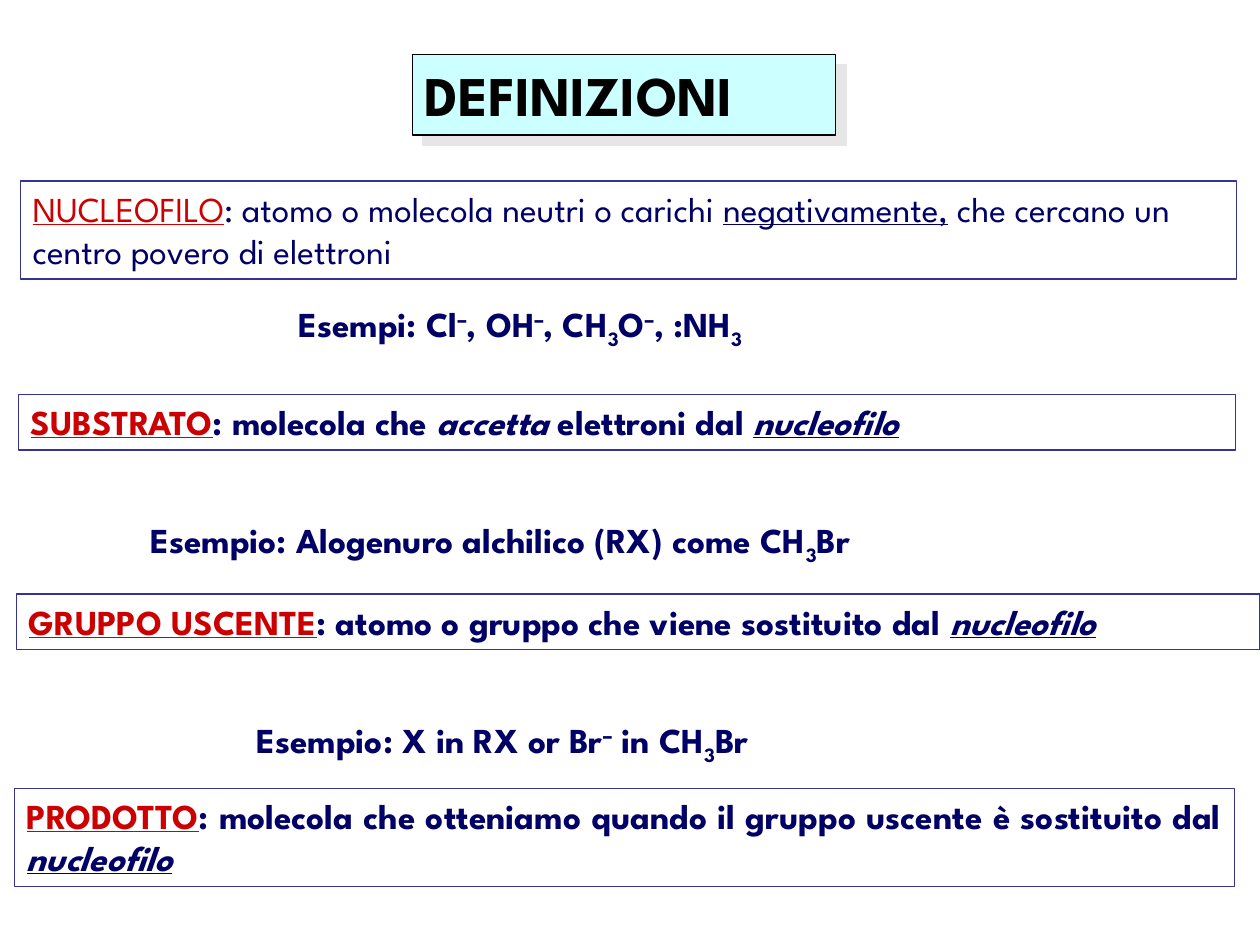
from lxml.etree import SubElement
from pptx import Presentation
from pptx.dml.color import RGBColor
from pptx.enum.shapes import MSO_SHAPE
from pptx.enum.text import MSO_ANCHOR, MSO_AUTO_SIZE, PP_ALIGN
from pptx.oxml.ns import qn
from pptx.util import Pt

FONT = "League Spartan"
BLACK = RGBColor(0x00, 0x00, 0x00)
NAVY = RGBColor(0x00, 0x00, 0x66)
RED = RGBColor(0xCC, 0x00, 0x00)
BORDER = RGBColor(0x33, 0x33, 0x99)
CYAN = RGBColor(0xCC, 0xFF, 0xFF)
SHADOW = RGBColor(0xE7, 0xE6, 0xE6)

# Run styles: t = term, u = underlined, i = italic, ^ = superscript, _ = subscript
BASELINES = {"^": "30000", "_": "-25000"}
MINUS = ("–", "^")
THREE = ("3", "_")
NUCLEOPHILE = ("nucleofilo", "iu")

# Each definition: box, bold, alignment, runs
DEFINITIONS = [
    ((11.6, 103.5, 695, 56), False, PP_ALIGN.LEFT, [
        ("NUCLEOFILO", "tu"), (": atomo o molecola neutri o carichi ", ""),
        ("negativamente,", "u"), (" che cercano un centro povero di elettroni", "")]),
    ((10.5, 225.4, 695.5, 31.8), True, PP_ALIGN.LEFT, [
        ("SUBSTRATO", "tu"), (": molecola che ", ""), ("accetta", "i"),
        (" elettroni dal ", ""), NUCLEOPHILE]),
    ((9.4, 339.5, 710.6, 31.8), True, PP_ALIGN.JUSTIFY, [
        ("GRUPPO USCENTE", "tu"),
        (": atomo o gruppo che viene sostituito dal ", ""), NUCLEOPHILE]),
    ((8.2, 450.5, 697.2, 56), True, PP_ALIGN.JUSTIFY, [
        ("PRODOTTO", "tu"),
        (": molecola che otteniamo quando il gruppo uscente è sostituito dal ", ""),
        NUCLEOPHILE]),
]

# Each example: box, runs
EXAMPLES = [
    ((163.5, 169.3, 393.3, 31), [
        ("Esempi: Cl", ""), MINUS, (", OH", ""), MINUS, (", CH", ""), THREE,
        ("O", ""), MINUS, (", :NH", ""), THREE]),
    ((78.9, 293, 562.2, 31), [
        ("Esempio: Alogenuro alchilico (RX) come CH", ""), THREE, ("Br", "")]),
    ((139.5, 407, 440.8, 31), [
        ("Esempio: X in RX or Br", ""), MINUS, (" in CH", ""), THREE, ("Br", "")]),
]


def format_frame(frame, size, bold, align, auto_size=MSO_AUTO_SIZE.SHAPE_TO_FIT_TEXT):
    """Set up the text frame and return its first paragraph."""
    frame.word_wrap = True
    frame.auto_size = auto_size
    frame.vertical_anchor = MSO_ANCHOR.TOP
    para = frame.paragraphs[0]
    para.alignment = align
    para.font.name = FONT
    para.font.size = Pt(size)
    para.font.bold = bold
    return para


def add_spans(para, spans):
    for text, style in spans:
        span = para.add_run()
        span.text = text
        span.font.color.rgb = RED if "t" in style else NAVY
        if "u" in style:
            span.font.underline = True
        if "i" in style:
            span.font.italic = True
        if style in BASELINES:
            span.font._element.set("baseline", BASELINES[style])


def add_hard_shadow(shape, distance, degrees):
    effects = SubElement(shape._element.spPr, qn("a:effectLst"))
    shadow = SubElement(effects, qn("a:outerShdw"), blurRad="0", dist=str(Pt(distance)),
                        dir=str(degrees * 60000), algn="ctr", rotWithShape="0")
    SubElement(shadow, qn("a:srgbClr"), val=str(SHADOW))


def place_title(page, box, text):
    title = page.shapes.title
    title.left, title.top, title.width, title.height = map(Pt, box)
    title.fill.solid()
    title.fill.fore_color.rgb = CYAN
    title.line.color.rgb = BLACK
    title.line.width = Pt(0.75)
    add_hard_shadow(title, 8.5, 45)
    title.text_frame.text = text
    # A fixed size keeps the placeholder from growing to its layout height
    para = format_frame(title.text_frame, 32, True, PP_ALIGN.LEFT, MSO_AUTO_SIZE.NONE)
    para.font.color.rgb = BLACK


def place_definition(page, box, bold, align, spans):
    frame_box = page.shapes.add_shape(MSO_SHAPE.RECTANGLE, *map(Pt, box))
    frame_box.shadow.inherit = False
    frame_box.fill.background()
    frame_box.line.color.rgb = BORDER
    frame_box.line.width = Pt(0.75)
    add_spans(format_frame(frame_box.text_frame, 20, bold, align), spans)


def place_example(page, box, spans):
    text_box = page.shapes.add_textbox(*map(Pt, box))
    add_spans(format_frame(text_box.text_frame, 20, True, PP_ALIGN.LEFT), spans)


def main():
    deck = Presentation()
    deck.slide_width, deck.slide_height = Pt(720), Pt(540)
    page = deck.slides.add_slide(deck.slide_layouts[5])

    # Heading
    place_title(page, (235.6, 31, 242, 46.1), "DEFINIZIONI")

    # Framed definitions, with the examples between them
    for definition in DEFINITIONS:
        place_definition(page, *definition)
    for example in EXAMPLES:
        place_example(page, *example)

    deck.save("out.pptx")


if __name__ == "__main__":
    main()
